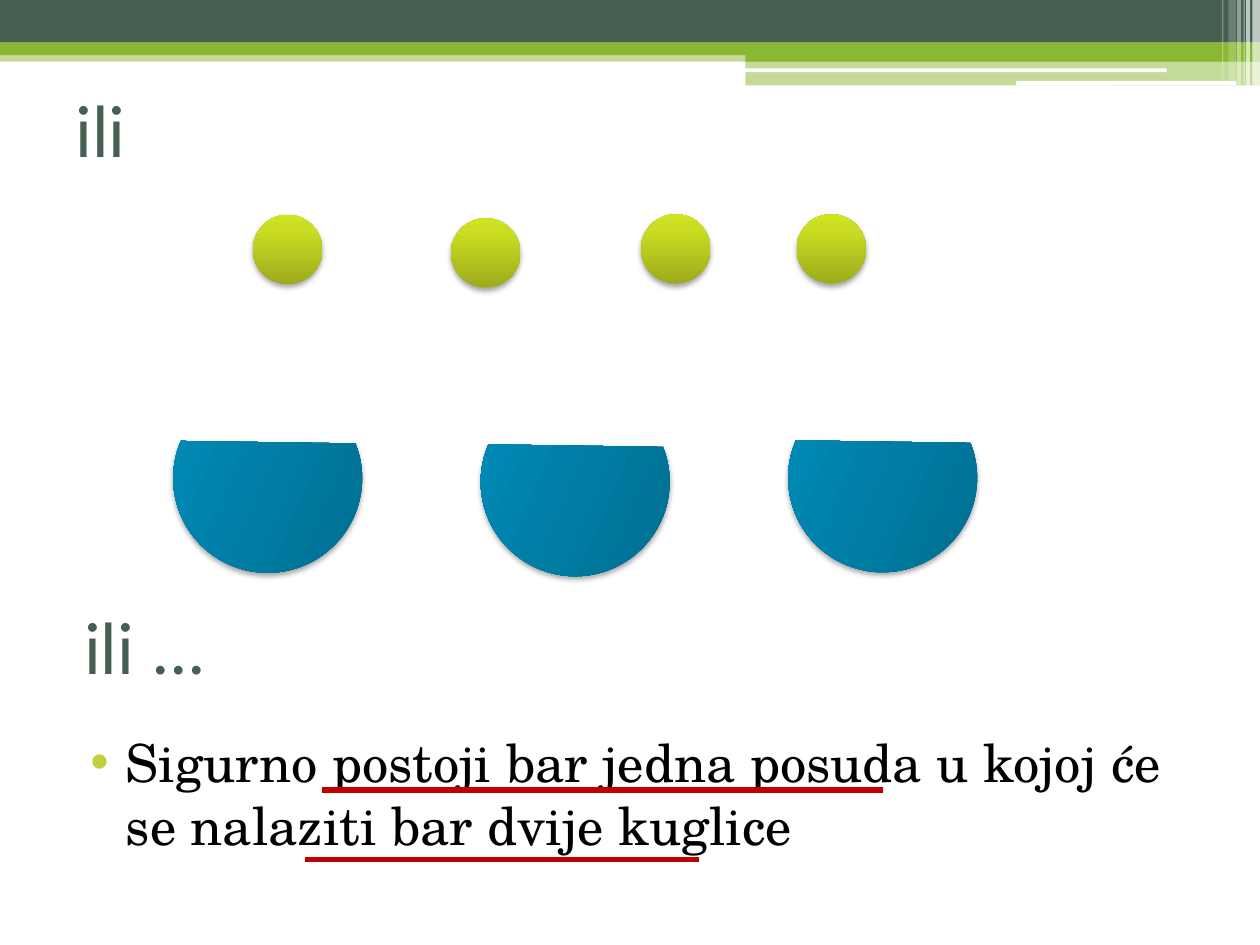
from lxml.etree import SubElement
from pptx import Presentation
from pptx.dml.color import RGBColor
from pptx.enum.shapes import MSO_CONNECTOR, MSO_SHAPE
from pptx.enum.text import MSO_ANCHOR
from pptx.oxml import parse_xml
from pptx.oxml.ns import nsdecls, qn
from pptx.util import Pt


def color(value):
    return RGBColor.from_string(value)


def add_solid(kind, box, gradient=None, fill=None, opacity=100):
    shape = slide.shapes.add_shape(kind, *map(Pt, box))
    shape.line.fill.background()
    shape.shadow.inherit = False
    if fill:
        shape.fill.solid()
        shape.fill.fore_color.rgb = color(fill)
        if opacity < 100:
            tint = shape.fill._xPr.find(".//" + qn("a:srgbClr"))
            SubElement(tint, qn("a:alpha"), val=str(opacity * 1000))
    else:
        stops = "".join(
            f'<a:gs pos="{place * 1000}"><a:srgbClr val="{tone}"/></a:gs>'
            for place, tone in zip((0, 80, 100), gradient))
        properties = shape._element.spPr
        properties.find(qn("a:prstGeom")).addnext(parse_xml(
            f'<a:gradFill {nsdecls("a")} rotWithShape="1"><a:gsLst>{stops}</a:gsLst>'
            '<a:lin ang="16200000" scaled="0"/></a:gradFill>'))
        properties.find(qn("a:effectLst")).append(parse_xml(
            f'<a:outerShdw {nsdecls("a")} blurRad="39370" dist="22860" dir="5400000" '
            'algn="ctr" rotWithShape="0"><a:srgbClr val="000000">'
            '<a:alpha val="35000"/></a:srgbClr></a:outerShdw>'))
    return shape


presentation = Presentation()
presentation.slide_width = Pt(720)
presentation.slide_height = Pt(540)
slide = presentation.slides.add_slide(presentation.slide_layouts[6])

for left, top, width, height, fill, opacity in [
    (0, 28.8, 720, 6.5, "8AB833", 50),
    (0, 0, 720, 24.4, "455F51", 100),
    (0, 24.4, 720, 7.2, "8AB833", 100),
    (426, 28, 294, 7.2, "8AB833", 100),
    (426, 34.6, 294, 14.2, "8AB833", 50),
]:
    add_solid(MSO_SHAPE.RECTANGLE, (left, top, width, height), fill=fill, opacity=opacity)

for box in [(425.5, 39.1, 241.2, 2.2), (580.5, 46.3, 126, 2.6)]:
    add_solid(MSO_SHAPE.ROUNDED_RECTANGLE, box, fill="FFFFFF")

for left, width, height, opacity in [
    (715.7, 4.3, 49, 65), (712.1, 2.2, 49, 65), (710.6, 0.7, 49, 60),
    (707, 2.2, 49, 40), (702, 4.3, 46, 20), (698.4, 0.7, 46, 30),
]:
    add_solid(MSO_SHAPE.RECTANGLE, (left, 0, width, height), fill="FFFFFF", opacity=opacity)

for left, top, words in [(36, 31.7, "ili"), (41, 327.6, "ili …")]:
    heading = slide.shapes.add_textbox(Pt(left), Pt(top), Pt(648), Pt(84.2)).text_frame
    heading.word_wrap = True
    heading.vertical_anchor = MSO_ANCHOR.MIDDLE
    run = heading.paragraphs[0].add_run()
    run.text = words
    run.font.size = Pt(40)
    run.font.name = "Lato"
    run.font.color.rgb = color("455F51")

conclusion = slide.shapes.add_textbox(Pt(36), Pt(413.5), Pt(648), Pt(104)).text_frame
conclusion.word_wrap = True
paragraph = conclusion.paragraphs[0]
bullet = paragraph._p.get_or_add_pPr()
bullet.set("marL", str(Pt(28.8)))
bullet.set("indent", str(Pt(-20.2)))
SubElement(SubElement(bullet, qn("a:buClr")), qn("a:srgbClr"), val="C0CF3A")
SubElement(bullet, qn("a:buFont"), typeface="Arial")
SubElement(bullet, qn("a:buChar"), char="•")
run = paragraph.add_run()
run.text = "Sigurno postoji bar jedna posuda u kojoj će se nalaziti bar dvije kuglice"
run.font.size = Pt(30)
run.font.name = "TeX Gyre Schola"
run.font.color.rgb = color("000000")

for column, top in enumerate([219.3, 221.3, 219]):
    bowl = add_solid(MSO_SHAPE.CHORD, (99 + column * 175.7, top, 108, 108),
                     gradient=("006A8B", "0089B4", "008AB5"))
    bowl.rotation = 293.3

for left, top in [(144.5, 122.8), (257.7, 124.7), (366.3, 122.4), (455.2, 122.4)]:
    add_solid(MSO_SHAPE.OVAL, (left, top, 39.7, 39.7),
              gradient=("9DAB1B", "CBDE23", "CFE31F"))

for start, end, height in [(184.3, 504.7, 451.4), (174.2, 399.6, 491)]:
    underline = slide.shapes.add_connector(
        MSO_CONNECTOR.STRAIGHT, Pt(start), Pt(height), Pt(end), Pt(height))
    underline.line.color.rgb = color("C00000")
    underline.line.width = Pt(3)
    SubElement(underline._element.spPr, qn("a:effectLst"))

presentation.save("out.pptx")
